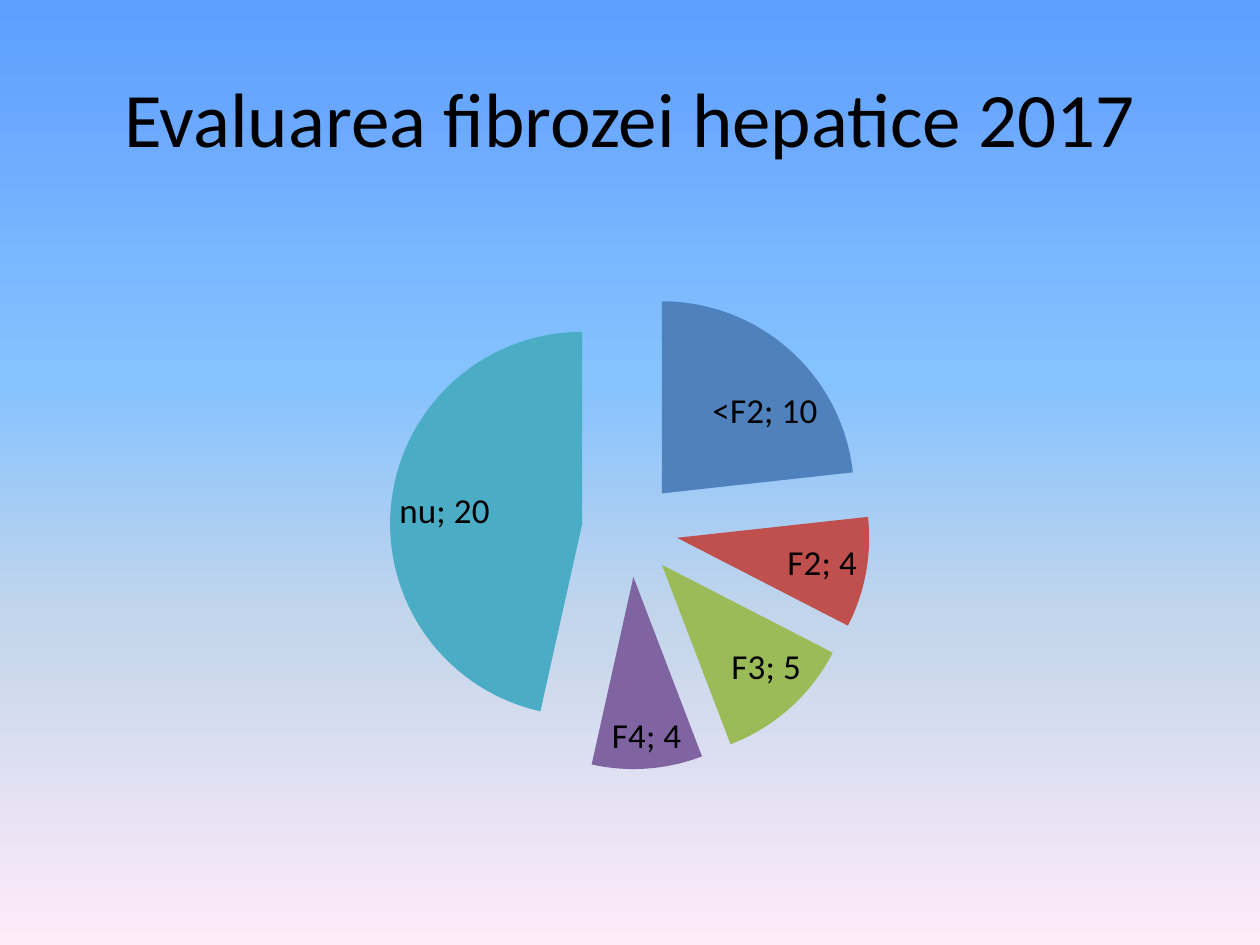
from typing import NamedTuple

from lxml import etree
from pptx import Presentation
from pptx.chart import data as chart_data
from pptx.dml.color import RGBColor
from pptx.enum import chart as chart_enum, text
from pptx.oxml import ns
from pptx.util import Inches, Pt

FONT = "Calibri"
BLACK = "000000"


class Stage(NamedTuple):
    label: str
    patients: int
    color: str


class GradientStop(NamedTuple):
    percent: int
    color: str


STAGES = [
    Stage("<F2", 10, "4F81BD"),
    Stage("F2", 4, "C0504D"),
    Stage("F3", 5, "9BBB59"),
    Stage("F4", 4, "8064A2"),
    Stage("nu", 20, "4BACC6"),
]
SKY = [
    GradientStop(0, "5E9EFF"),
    GradientStop(40, "85C2FF"),
    GradientStop(66, "C4D6EB"),
    GradientStop(100, "FFEBFA"),
]


def rgb(color: str) -> RGBColor:
    return RGBColor.from_string(color)


def set_font(font, size: int) -> None:
    font.name = FONT
    font.size = Pt(size)
    font.color.rgb = rgb(BLACK)


def paint_background(slide, stops: list[GradientStop]) -> None:
    fill = slide.background.fill
    fill.gradient()
    fill.gradient_angle = 270  # counter-clockwise, so top to bottom
    stop_list = slide.element.find(".//" + ns.qn("a:gsLst"))
    stop_list.clear()
    for stop in stops:
        gs = etree.SubElement(stop_list, ns.qn("a:gs"), pos=str(stop.percent * 1000))
        etree.SubElement(gs, ns.qn("a:srgbClr"), val=stop.color)


def add_title(slide, wording: str) -> None:
    title = slide.shapes.add_textbox(Inches(0.5), Inches(0.3), Inches(9), Inches(1.25))
    frame = title.text_frame
    frame.word_wrap = True
    frame.vertical_anchor = text.MSO_ANCHOR.MIDDLE
    paragraph = frame.paragraphs[0]
    paragraph.text = wording
    paragraph.alignment = text.PP_ALIGN.CENTER
    set_font(paragraph.font, 44)


def set_plot_layout(chart, x: float, y: float, w: float, h: float) -> None:
    plot_area = chart.element.find(".//" + ns.qn("c:plotArea"))
    layout = plot_area.find(ns.qn("c:layout"))
    if layout is None:
        layout = etree.Element(ns.qn("c:layout"))
        plot_area.insert(0, layout)
    manual = etree.SubElement(layout, ns.qn("c:manualLayout"))
    settings = {"layoutTarget": "inner", "xMode": "edge", "yMode": "edge",
                "x": x, "y": y, "w": w, "h": h}
    for tag, value in settings.items():
        etree.SubElement(manual, ns.qn(f"c:{tag}"), val=str(value))


def add_fibrosis_pie(slide, stages: list[Stage]) -> None:
    counts = chart_data.CategoryChartData()
    counts.categories = [stage.label for stage in stages]
    counts.add_series("Series 1", [stage.patients for stage in stages])
    chart = slide.shapes.add_chart(
        chart_enum.XL_CHART_TYPE.PIE,
        Inches(0.5), Inches(1.75), Inches(9), Inches(4.95), counts).chart
    chart.has_legend = False
    chart.has_title = False
    set_font(chart.font, 10)
    set_plot_layout(chart, 0.1, 0.11, 0.8, 0.77)

    # Slices, pulled apart
    pie = chart.plots[0]
    pie.vary_by_categories = True
    series = pie.series[0]
    for index, stage in enumerate(stages):
        slice_fill = series.points[index].format.fill
        slice_fill.solid()
        slice_fill.fore_color.rgb = rgb(stage.color)
    explosion = etree.Element(ns.qn("c:explosion"), val="25")
    series._element.find(ns.qn("c:dPt")).addprevious(explosion)

    # Category and value on each slice
    labels = series.data_labels
    labels.show_category_name = True
    labels.show_value = True
    labels.show_percentage = False
    labels.position = chart_enum.XL_LABEL_POSITION.BEST_FIT
    set_font(labels.font, 20)
    separator = etree.Element(ns.qn("c:separator"))
    separator.text = "; "
    labels._element.find(ns.qn("c:showBubbleSize")).addnext(separator)


def main() -> None:
    deck = Presentation()
    deck.slide_width, deck.slide_height = Inches(10), Inches(7.5)
    slide = deck.slides.add_slide(deck.slide_layouts[6])
    paint_background(slide, SKY)
    add_title(slide, "Evaluarea fibrozei hepatice 2017")
    add_fibrosis_pie(slide, STAGES)
    deck.save("out.pptx")


if __name__ == "__main__":
    main()
